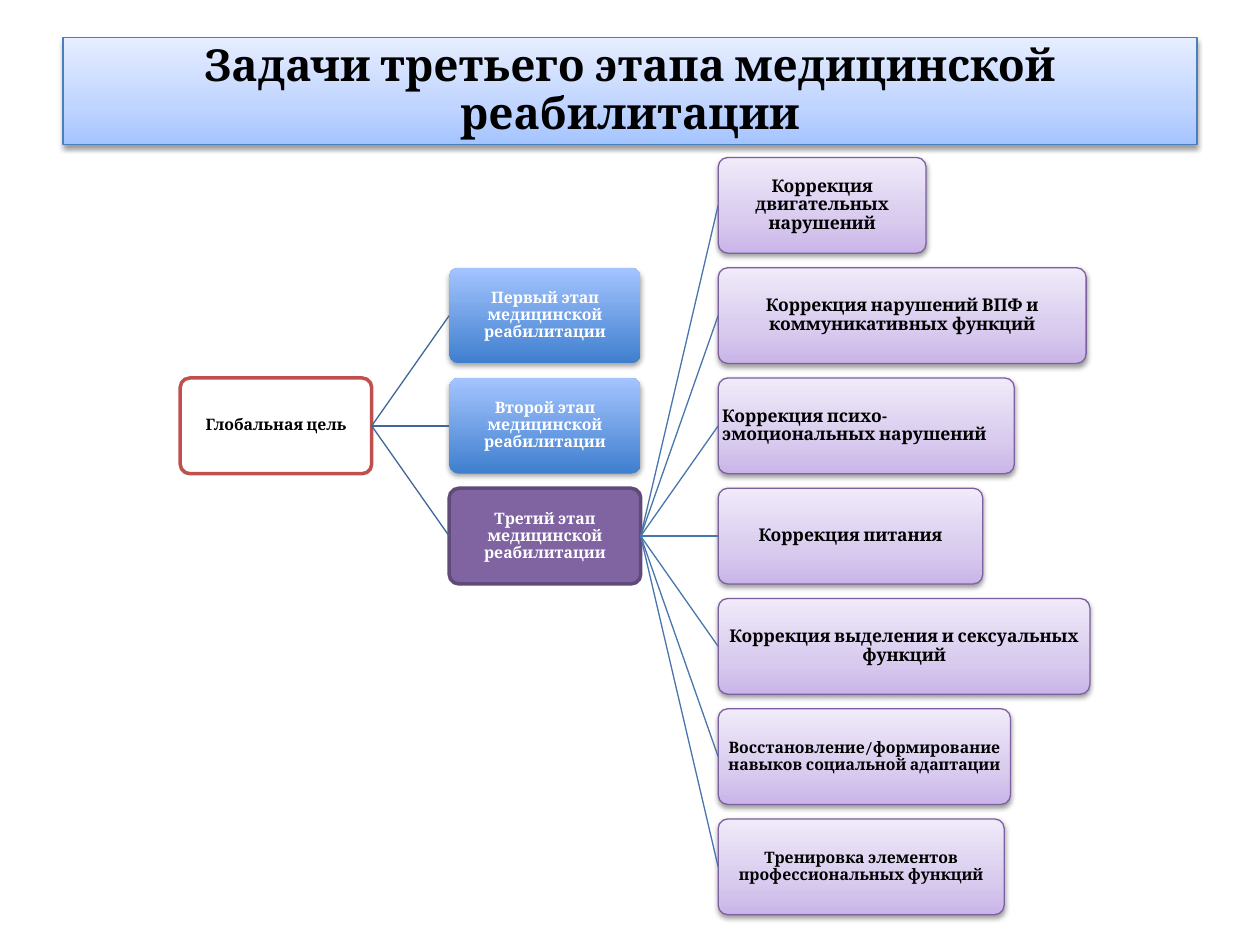
from dataclasses import dataclass
from lxml.etree import SubElement as Sub
from pptx import Presentation
from pptx.dml.color import RGBColor as RGB
from pptx.enum.shapes import MSO_CONNECTOR as Link, MSO_SHAPE as Kind
from pptx.enum.text import MSO_ANCHOR as Anchor, PP_ALIGN as Align
from pptx.oxml.ns import qn
from pptx.util import Inches, Pt


@dataclass(frozen=True)
class Theme:
    font: str = "Cambria"
    black: str = "000000"
    white: str = "FFFFFF"
    red: str = "C0504D"
    plum: str = "8064A2"
    dark: str = "5F4A78"
    edge: str = "7D60A0"
    frame: str = "4B7EBC"
    near: str = "3F6797"
    far: str = "4875AC"
    sky: tuple = ((0, "A4C4FF"), (35, "BFD4FF"), (100, "E6EEFF"))
    blue: tuple = ((0, "3F7FCE"), (100, "A4C4FF"))
    lilac: tuple = ((0, "C9B5E8"), (35, "D8CBEE"), (100, "F0EAF9"))
    head: float = 25.2
    large: float = 10
    small: float = 9


@dataclass(frozen=True)
class Grid:
    left: float = 1.43
    top: float = 1.25
    col: float = 2.135
    row: float = 0.875
    wide: float = 1.52
    high: float = 0.76


T = Theme()
G = Grid()


def blend(shape, stops):
    shape.fill.gradient()
    shape.fill.gradient_angle = 90
    ramp = shape.element.spPr.find(qn("a:gradFill")).find(qn("a:gsLst"))
    for old in list(ramp):
        ramp.remove(old)
    for spot, hue in stops:
        stop = Sub(ramp, qn("a:gs"), pos=str(spot * 1000))
        Sub(stop, qn("a:srgbClr"), val=hue)


def shade(shape, alpha):
    glow = Sub(shape.element.spPr.find(qn("a:effectLst")), qn("a:outerShdw"),
               blurRad=str(Pt(3.1)), dist=str(Pt(1.6)), dir="5400000", rotWithShape="0")
    hue = Sub(glow, qn("a:srgbClr"), val=T.black)
    Sub(hue, qn("a:alpha"), val=str(alpha * 1000))


def write(shape, text, size, hue=T.black, align=Align.CENTER, pad=0.01):
    frame = shape.text_frame
    frame.word_wrap = True
    frame.vertical_anchor = Anchor.MIDDLE
    frame.margin_left = frame.margin_right = Inches(pad)
    frame.margin_top = frame.margin_bottom = Inches(min(pad, 0.05))
    para = frame.paragraphs[0]
    para.alignment = align
    para.line_spacing = 0.9
    run = para.add_run()
    run.text = text
    font = run.font
    font.name, font.size, font.bold = T.font, Pt(size), True
    font.color.rgb = RGB.from_string(hue)


def panel(slide, kind, place, fill, line=None, thick=0.75, alpha=0):
    shape = slide.shapes.add_shape(kind, *map(Inches, place))
    shape.shadow.inherit = False
    if isinstance(fill, tuple):
        blend(shape, fill)
    else:
        shape.fill.solid()
        shape.fill.fore_color.rgb = RGB.from_string(fill)
    if line:
        shape.line.color.rgb = RGB.from_string(line)
        shape.line.width = Pt(thick)
    else:
        shape.line.fill.background()
    if alpha:
        shade(shape, alpha)
    return shape


def node(slide, col, row, fill, wide=G.wide, **look):
    place = G.left + col * G.col, G.top + row * G.row, wide, G.high
    shape = panel(slide, Kind.ROUNDED_RECTANGLE, place, fill, **look)
    shape.adjustments[0] = 0.1
    return shape


def join(slide, start, end, hue):
    wire = slide.shapes.add_connector(Link.STRAIGHT, 0, 0, 0, 0)
    wire.begin_connect(start, 3)
    wire.end_connect(end, 1)
    wire.line.color.rgb = RGB.from_string(hue)
    wire.line.width = Pt(0.75)
    Sub(wire.element.spPr, qn("a:effectLst"))


def main():
    deck = Presentation()
    deck.slide_width, deck.slide_height = Inches(10), Inches(7.5)
    slide = deck.slides.add_slide(deck.slide_layouts[6])

    title = panel(slide, Kind.RECTANGLE, (0.5, 0.3, 9, 0.85), T.sky, line=T.frame, alpha=38)
    write(title, "Задачи третьего этапа медицинской реабилитации", T.head, pad=0.1)

    goal = node(slide, 0, 2, T.white, line=T.red, thick=2)
    write(goal, "Глобальная цель", T.small)

    past = dict(fill=T.blue, alpha=35)
    focus = dict(fill=T.plum, line=T.dark, thick=2)
    stages = ("Первый", past), ("Второй", past), ("Третий", focus)
    for row, (name, look) in enumerate(stages, 1):
        stage = node(slide, 1, row, **look)
        write(stage, f"{name} этап медицинской реабилитации", T.small, hue=T.white)
        join(slide, goal, stage, T.near)

    tasks = (
        ("Коррекция двигательных нарушений", 1.65, T.large, Align.CENTER),
        ("Коррекция нарушений ВПФ и коммуникативных функций", 2.92, T.large, Align.CENTER),
        ("Коррекция психо-эмоциональных нарушений", 2.35, T.large, Align.LEFT),
        ("Коррекция питания", 2.1, T.large, Align.CENTER),
        ("Коррекция выделения и сексуальных функций", 2.95, T.large, Align.CENTER),
        ("Восстановление/формирование навыков социальной адаптации", 2.32, T.small, Align.CENTER),
        ("Тренировка элементов профессиональных функций", 2.27, T.small, Align.CENTER),
    )
    for row, (text, wide, size, align) in enumerate(tasks):
        task = node(slide, 2, row, T.lilac, wide, line=T.edge, alpha=38)
        write(task, text, size, align=align)
        join(slide, stage, task, T.far)

    deck.save("out.pptx")


if __name__ == "__main__":
    main()
